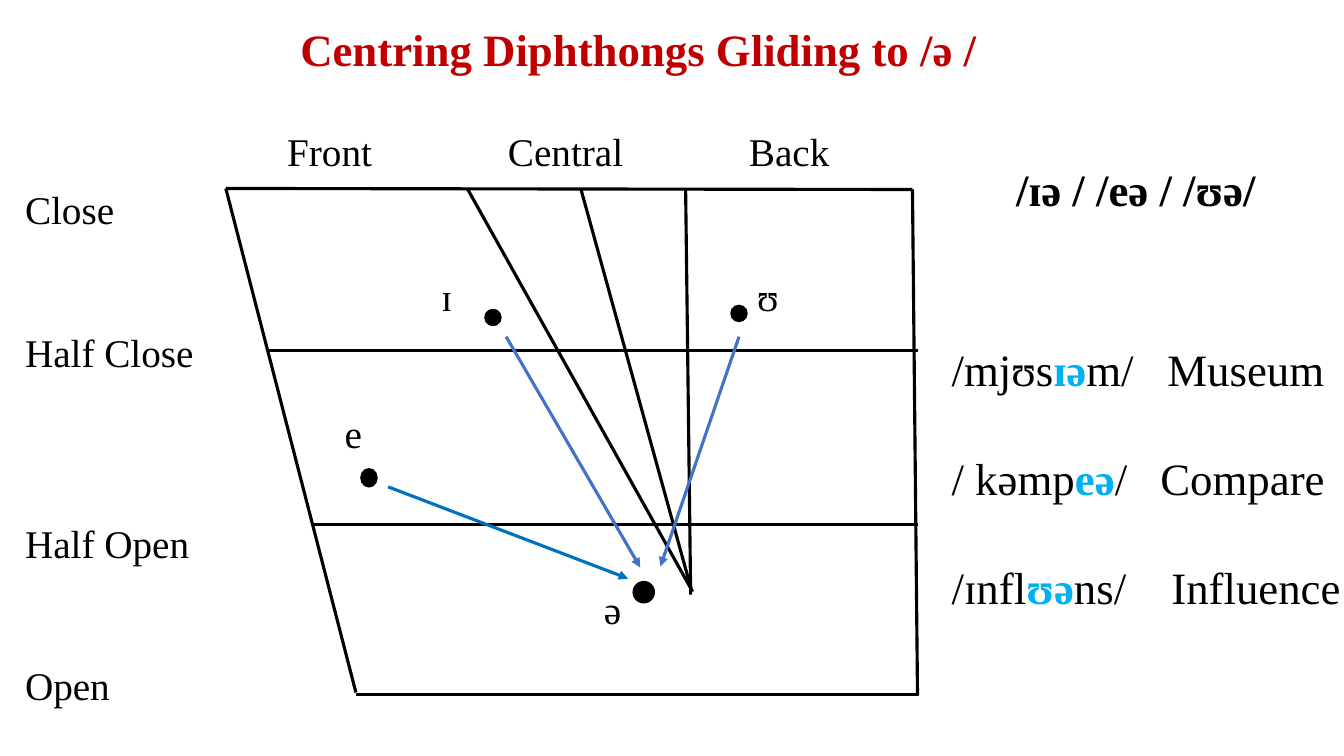
"""Builds a vowel chart slide showing the centring diphthongs that glide to schwa."""
import lxml.etree
import pptx
import pptx.dml.color
import pptx.enum.shapes
import pptx.enum.text
import pptx.oxml.ns
import pptx.util

Inches = pptx.util.Inches
Pt = pptx.util.Pt
qn = pptx.oxml.ns.qn

BLACK, RED, HIGHLIGHT = "000000", "C00000", "00B0F0"
GLIDE_BLUE, FRONT_GLIDE_BLUE = "4472C4", "0070C0"


def color(hex_string):
    return pptx.dml.color.RGBColor.from_string(hex_string)


class VowelSlide:
    font_name = "Times New Roman"
    label_size = 28
    large_size = 32
    line_width = 2.25

    def __init__(self, slide):
        self.shapes = slide.shapes

    def text(self, left, top, width, height, paragraphs, size=label_size,
             ink=BLACK, bold=False, gaps=(), tabs=()):
        box = self.shapes.add_textbox(Inches(left), Inches(top), Inches(width), Inches(height))
        frame = box.text_frame
        frame.word_wrap = True
        frame.auto_size = pptx.enum.text.MSO_AUTO_SIZE.SHAPE_TO_FIT_TEXT
        for index, runs in enumerate(paragraphs):
            paragraph = frame.add_paragraph() if index else frame.paragraphs[0]
            if tabs:
                self.tab_stops(paragraph, tabs[index])
            if index:
                paragraph.space_before = Pt(gaps[index - 1])
            paragraph.font.name = self.font_name
            paragraph.font.size = Pt(size)
            paragraph.font.bold = bold
            paragraph.font.color.rgb = color(ink)
            for content, highlighted in runs:
                run = paragraph.add_run()
                run.text = content
                if highlighted:
                    run.font.bold = True
                    run.font.color.rgb = color(HIGHLIGHT)

    def tab_stops(self, paragraph, positions):
        properties = paragraph._p.get_or_add_pPr()
        stops = lxml.etree.SubElement(properties, qn("a:tabLst"))
        for position in positions:
            lxml.etree.SubElement(stops, qn("a:tab"), pos=str(Inches(position)), algn="l")

    def label(self, left, top, width, height, content, **style):
        self.text(left, top, width, height, [[(content, False)]], **style)

    def line(self, start, end, ink=BLACK, arrow=False):
        connector = self.shapes.add_connector(
            pptx.enum.shapes.MSO_CONNECTOR.STRAIGHT, *map(Inches, start + end))
        connector.line.color.rgb = color(ink)
        connector.line.width = Pt(self.line_width)
        properties = connector._element.spPr
        if arrow:
            lxml.etree.SubElement(connector.line._get_or_add_ln(), qn("a:tailEnd"), type="triangle")
        lxml.etree.SubElement(properties, qn("a:effectLst"))

    def dot(self, left, top, width, height):
        vowel = self.shapes.add_shape(
            pptx.enum.shapes.MSO_SHAPE.OVAL, *map(Inches, (left, top, width, height)))
        vowel.shadow.inherit = False
        vowel.fill.solid()
        vowel.fill.fore_color.rgb = color(BLACK)
        vowel.line.color.rgb = color(BLACK)
        vowel.line.width = Pt(1)


def main():
    presentation = pptx.Presentation()
    presentation.slide_width = Inches(13.33)
    presentation.slide_height = Inches(7.5)
    page = VowelSlide(presentation.slides.add_slide(presentation.slide_layouts[6]))

    page.label(2.88, 0.17, 10.46, 0.64, "Centring Diphthongs Gliding to /ə /",
               size=page.large_size, ink=RED, bold=True)

    chart_lines = [
        ((2.24, 1.87), (9.05, 1.88)),
        ((2.24, 1.87), (3.53, 6.87)),
        ((9.05, 1.88), (9.1, 6.9)),
        ((3.53, 6.89), (9.1, 6.89)),
        ((2.66, 3.48), (9.1, 3.48)),
        ((3.09, 5.2), (9.1, 5.2)),
        ((6.8, 1.87), (6.85, 5.9)),
        ((4.64, 1.88), (6.87, 5.87)),
        ((5.76, 1.87), (6.86, 5.86)),
    ]
    for start, end in chart_lines:
        page.line(start, end)

    vowel_dots = [
        (6.28, 5.77, 0.21, 0.21),
        (3.58, 4.65, 0.16, 0.18),
        (4.81, 3.07, 0.16, 0.16),
        (7.25, 3.03, 0.16, 0.16),
    ]
    for bounds in vowel_dots:
        page.dot(*bounds)

    glides = [
        ((5.02, 3.34), (6.35, 5.63), GLIDE_BLUE),
        ((3.85, 4.83), (6.23, 5.74), FRONT_GLIDE_BLUE),
        ((7.33, 3.34), (6.55, 5.62), GLIDE_BLUE),
    ]
    for start, end, ink in glides:
        page.line(start, end, ink, arrow=True)

    vowel_labels = [
        (5.89, 5.76, 1.05, "ə"),
        (3.32, 4.01, 0.85, "e"),
        (4.28, 2.65, 0.67, "ɪ"),
        (7.41, 2.65, 0.42, "ʊ"),
    ]
    for left, top, width, vowel in vowel_labels:
        page.label(left, top, width, 0.57, vowel)

    page.label(2.75, 1.21, 7, 0.57, "Front\tCentral\tBack", tabs=[(2.19, 4.58)])

    heights = ["Close", "Half Close", "Half Open", "Open"]
    page.text(0.15, 1.79, 2.23, 5.21, [[(height, False)] for height in heights],
              gaps=(68.4, 102.6, 68.4))

    page.label(9.98, 1.56, 2.68, 0.64, "/ɪə / /eə / /ʊə/", size=page.large_size, bold=True)

    examples = [
        ("/mjʊs", "ɪə", "m/", "Museum", 2.14),
        ("/ kəmp", "eə", "/", "Compare", 2.07),
        ("/ɪnfl", "ʊə", "ns/", "Influence", 2.18),
    ]
    page.text(9.34, 3.34, 4.1, 2.79,
              [[(onset, False), (diphthong, True), (f"{coda}\t{word}", False)]
               for onset, diphthong, coda, word, _ in examples],
              size=page.large_size, gaps=(39.5, 39.5),
              tabs=[(word_start,) for *_, word_start in examples])

    presentation.save("out.pptx")


if __name__ == "__main__":
    main()
